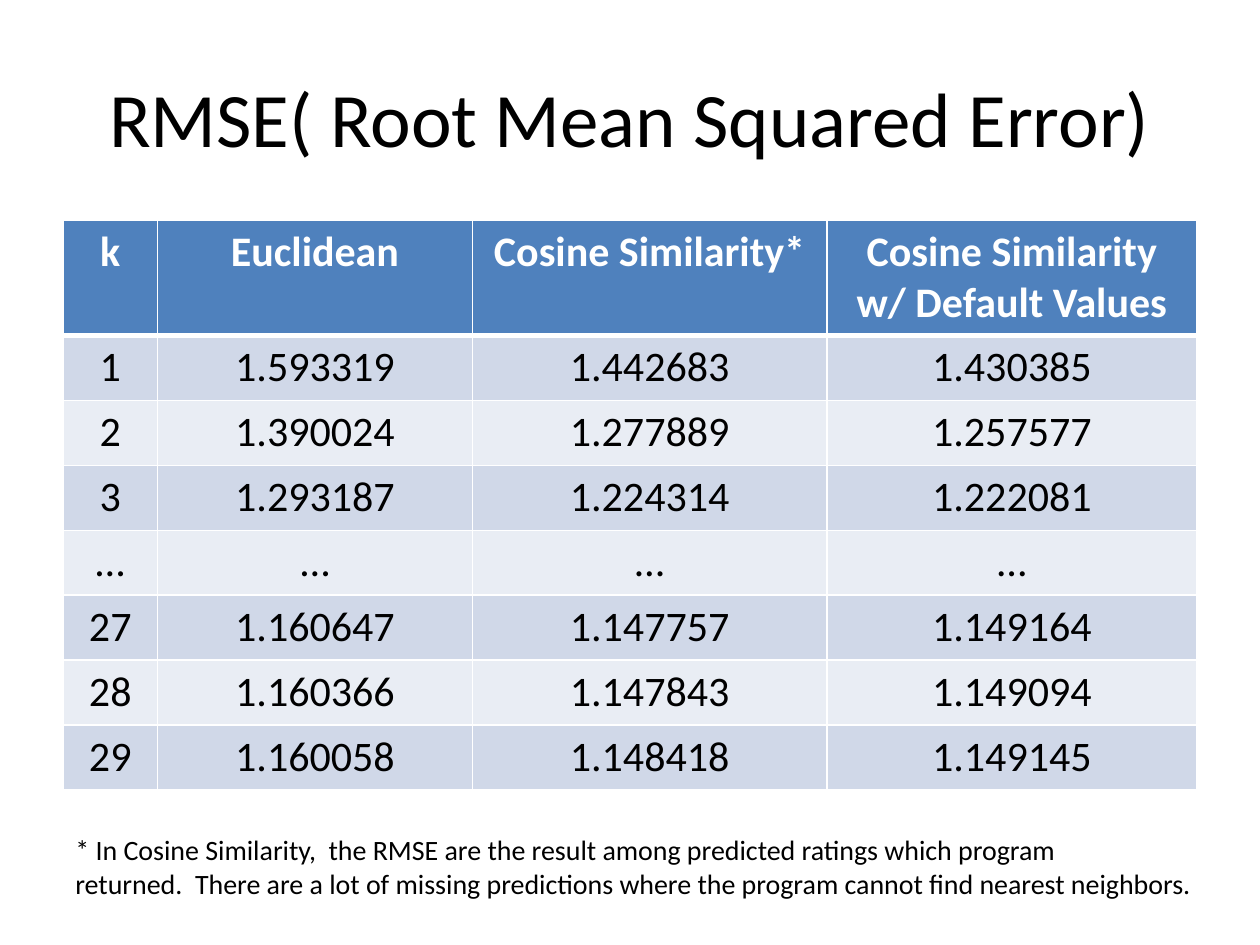
from dataclasses import dataclass

import pptx
import pptx.dml.color
import pptx.enum.text
import pptx.oxml
import pptx.oxml.ns
import pptx.util

Pt = pptx.util.Pt
ALIGN = pptx.enum.text.PP_ALIGN
ANCHOR = pptx.enum.text.MSO_ANCHOR
FONT = "Calibri"
BLACK, WHITE = "000000", "FFFFFF"
HEADER_FILL = "4F81BD"
BAND_FILLS = ("D0D8E8", "E9EDF4")


@dataclass(frozen=True)
class Row:
    texts: tuple[str, ...]
    height: float
    fill: str
    color: str = BLACK
    bold: bool = False
    top: float = 1
    bottom: float = 1


COLUMN_WIDTHS = (54, 180, 202.5, 211.5)
HEADINGS = ("k", "Euclidean", "Cosine Similarity*", "Cosine Similarity w/ Default Values")
RESULTS = (
    ("1", "1.593319", "1.442683", "1.430385"),
    ("2", "1.390024", "1.277889", "1.257577"),
    ("3", "1.293187", "1.224314", "1.222081"),
    ("…", "…", "…", "…"),
    ("27", "1.160647", "1.147757", "1.149164"),
    ("28", "1.160366", "1.147843", "1.149094"),
    ("29", "1.160058", "1.148418", "1.149145"),
)
FOOTNOTE = (
    "* In Cosine Similarity,  the RMSE are the result among predicted ratings which program",
    "returned.  There are a lot of missing predictions where the program cannot find nearest neighbors.",
)


def rgb(color: str) -> pptx.dml.color.RGBColor:
    return pptx.dml.color.RGBColor.from_string(color)


def apply(target, values: dict) -> None:
    for name, value in values.items():
        setattr(target, name, value)


def write(paragraph, text: str, size: float, color: str = BLACK,
          bold: bool = False, alignment=ALIGN.LEFT) -> None:
    paragraph.alignment = alignment
    span = paragraph.add_run()
    span.text = text
    apply(span.font, {"name": FONT, "size": Pt(size), "bold": bold})
    span.font.color.rgb = rgb(color)


def place(shape, left: float, top: float, width: float, height: float) -> None:
    apply(shape, {"left": Pt(left), "top": Pt(top), "width": Pt(width), "height": Pt(height)})


def set_borders(cell, top: float, bottom: float) -> None:
    properties = cell._tc.get_or_add_tcPr()
    for side, width in {"L": 1, "R": 1, "T": top, "B": bottom}.items():
        properties.append(pptx.oxml.parse_xml(
            f'<a:ln{side} {pptx.oxml.ns.nsdecls("a")} w="{Pt(width)}">'
            f'<a:solidFill><a:srgbClr val="{WHITE}"/></a:solidFill></a:ln{side}>'
        ))


def draw_title(slide, text: str) -> None:
    title = slide.shapes.title
    place(title, 36, 21.6, 648, 90)
    title.text_frame.vertical_anchor = ANCHOR.MIDDLE
    write(title.text_frame.paragraphs[0], text, 44, alignment=ALIGN.CENTER)


def draw_table(slide, rows: list[Row]) -> None:
    table = slide.shapes.add_table(
        len(rows), len(COLUMN_WIDTHS), Pt(36), Pt(126),
        Pt(sum(COLUMN_WIDTHS)), Pt(sum(row.height for row in rows)),
    ).table
    for column, width in zip(table.columns, COLUMN_WIDTHS):
        column.width = Pt(width)
    for table_row, row in zip(table.rows, rows):
        table_row.height = Pt(row.height)
        for cell, text in zip(table_row.cells, row.texts):
            set_borders(cell, row.top, row.bottom)
            cell.fill.solid()
            cell.fill.fore_color.rgb = rgb(row.fill)
            write(cell.text_frame.paragraphs[0], text, 24, row.color, row.bold, ALIGN.CENTER)


def draw_footnote(slide, lines: tuple[str, ...]) -> None:
    box = slide.shapes.add_textbox(Pt(36), Pt(472.4), Pt(660), Pt(46))
    frame = box.text_frame
    apply(frame, {"word_wrap": False, "auto_size": pptx.enum.text.MSO_AUTO_SIZE.SHAPE_TO_FIT_TEXT})
    for index, line in enumerate(lines):
        paragraph = frame.add_paragraph() if index else frame.paragraphs[0]
        write(paragraph, line, 16)


def main() -> None:
    deck = pptx.Presentation()
    apply(deck, {"slide_width": Pt(720), "slide_height": Pt(540)})
    page = deck.slides.add_slide(deck.slide_layouts.get_by_name("Title Only"))
    header = Row(HEADINGS, 64.8, HEADER_FILL, WHITE, bold=True, bottom=3)
    body = [
        Row(texts, 37.1, BAND_FILLS[index % 2], top=1 if index else header.bottom)
        for index, texts in enumerate(RESULTS)
    ]
    draw_title(page, "RMSE( Root Mean Squared Error)")
    draw_table(page, [header, *body])
    draw_footnote(page, FOOTNOTE)
    deck.save("out.pptx")


if __name__ == "__main__":
    main()
